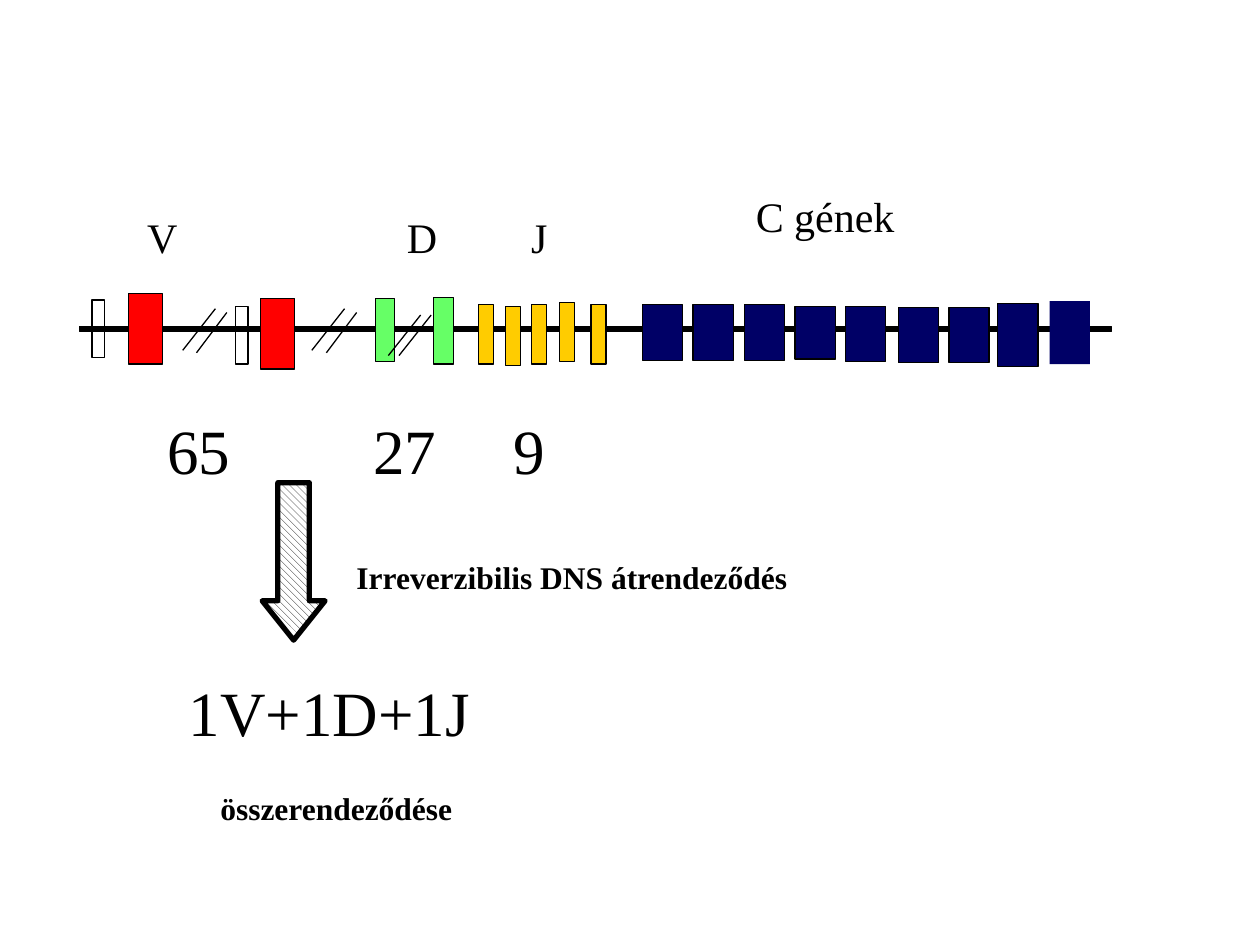
from lxml.etree import SubElement
from pptx import Presentation
from pptx.dml.color import RGBColor
from pptx.enum.dml import MSO_PATTERN
from pptx.enum.shapes import MSO_CONNECTOR, MSO_SHAPE
from pptx.oxml.ns import qn
from pptx.util import Pt

FONT = "Times New Roman"
COLORS = {
    "ink": "000000",
    "paper": "FFFFFF",
    "V": "FF0000",
    "D": "66FF66",
    "J": "FFCC00",
    "C": "000066",
}
LEADERS = [(52.6, 171.4), (134.6, 175)]
V_GENES = [(73.4, 167.8), (149, 170.6)]
D_GENES = [(214.6, 170.6, 10.8, 36), (247.7, 169.9, 11.5, 38.2)]
J_GENES = [(273.6, 174.2), (288.7, 175), (303.8, 174.2), (319.7, 172.8), (337.7, 174.2)]
C_GENES = [
    (367.2, 174.2, 31.7), (396, 174.2, 31.7), (425.5, 174.2, 31.7),
    (454.3, 175, 30.2), (483.1, 175, 31.7), (513.4, 175.7, 31.7),
    (542.2, 175.7, 31.7), (570.2, 173.5, 36),
]
BREAKS = [
    (123.1, 176.4, 18.7, 23.8), (129.6, 178.6, 17.3, 23),
    (196.9, 176.4, 18.7, 23.8), (203.8, 178.6, 17.3, 23),
    (246.4, 180, 18.4, 23.2), (240.4, 180, 18.5, 23.2),
]


def rgb(name):
    return RGBColor.from_string(COLORS[name])


def add_box(s, x, y, w, h, fill=None, line=0.75, kind=MSO_SHAPE.RECTANGLE):
    sp = s.shapes.add_shape(kind, Pt(x), Pt(y), Pt(w), Pt(h))
    sp.shadow.inherit = False
    if fill:
        sp.fill.solid()
        sp.fill.fore_color.rgb = rgb(fill)
    else:
        sp.fill.background()
    if line:
        sp.line.color.rgb = rgb("ink")
        sp.line.width = Pt(line)
    else:
        sp.line.fill.background()
    return sp


def add_break(s, x, y, dx, dy):
    cn = s.shapes.add_connector(
        MSO_CONNECTOR.STRAIGHT, Pt(x), Pt(y), Pt(x - dx), Pt(y + dy))
    cn.line.color.rgb = rgb("ink")
    cn.line.width = Pt(0.75)
    SubElement(cn._element.spPr, qn("a:effectLst"))


def add_arrow(s, x, y, w, h):
    sp = add_box(s, x, y, w, h, line=3, kind=MSO_SHAPE.DOWN_ARROW)
    sp.adjustments[0] = 0.5
    sp.adjustments[1] = 0.625
    sp.fill.patterned()
    sp.fill.pattern = MSO_PATTERN.WIDE_DOWNWARD_DIAGONAL
    sp.fill.fore_color.rgb = rgb("ink")
    sp.fill.back_color.rgb = rgb("paper")


def add_text(s, text, x, y, w, h, size=24, bold=False, tabs=()):
    tf = s.shapes.add_textbox(Pt(x), Pt(y), Pt(w), Pt(h)).text_frame
    tf.word_wrap = bool(tabs)
    p = tf.paragraphs[0]
    r = p.add_run()
    r.text = text
    r.font.name = FONT
    r.font.size = Pt(size)
    r.font.bold = bold
    r.font.color.rgb = rgb("ink")
    if tabs:
        tab_list = SubElement(p._p.get_or_add_pPr(), qn("a:tabLst"))
        for pos in tabs:
            SubElement(tab_list, qn("a:tab"), pos=str(Pt(pos)), algn="l")


def add_genes(s):
    add_box(s, 45.4, 186.5, 589.7, 2.9, "ink")
    for x, y in LEADERS:
        add_box(s, x, y, 7.2, 33.1)
    for x, y in V_GENES:
        add_box(s, x, y, 19.4, 40.3, "V")
    for x, y, w, h in D_GENES:
        add_box(s, x, y, w, h, "D")
    for x, y in J_GENES:
        add_box(s, x, y, 8.6, 33.8, "J")
    for x, y, h in C_GENES:
        add_box(s, x, y, 23, h, "C")
    add_box(s, 599.8, 172.1, 23, 36, "C", line=None)
    for segment in BREAKS:
        add_break(s, *segment)


def main():
    prs = Presentation()
    prs.slide_width, prs.slide_height = Pt(720), Pt(540)
    s = prs.slides.add_slide(prs.slide_layouts[6])
    add_genes(s)
    add_text(s, "C gének", 424.8, 105.1, 93.6, 36)
    add_text(s, "V\tD\tJ", 77, 117.4, 244.8, 36, tabs=(148.5, 219.5))
    add_text(s, "65\t27\t9", 88.6, 231.8, 230.4, 50.4, size=36, tabs=(117.5, 198))
    add_text(s, "1V+1D+1J", 100.8, 381.6, 175, 50.4, size=36)
    add_arrow(s, 149.8, 275.8, 36, 90)
    add_text(s, "összerendeződése", 118.8, 447.1, 147.6, 28.8, size=18, bold=True)
    add_text(s, "Irreverzibilis DNS átrendeződés", 196.6, 315.4, 261.4, 28.8,
             size=18, bold=True)
    prs.save("out.pptx")


if __name__ == "__main__":
    main()
